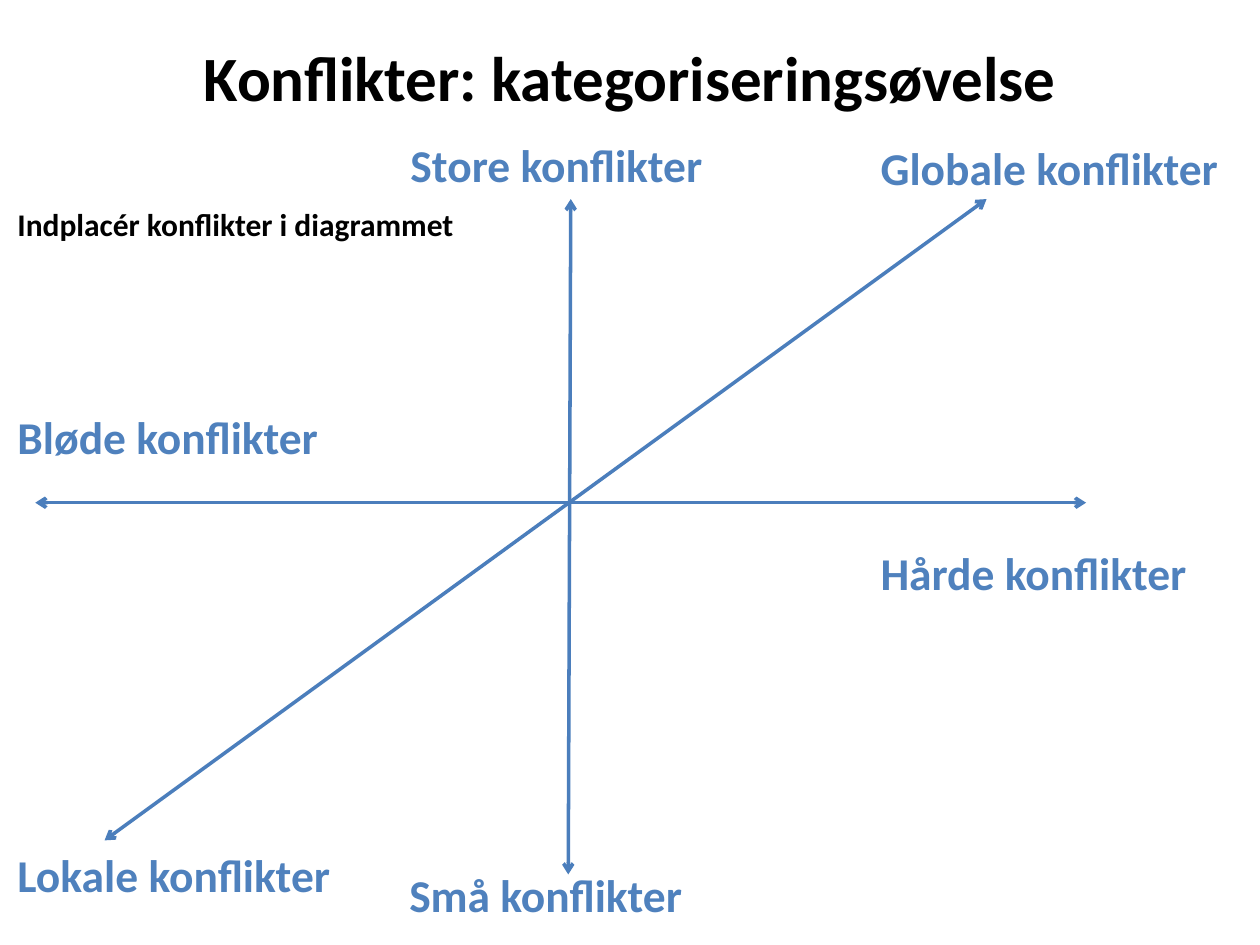
from lxml.etree import SubElement
from pptx import Presentation
from pptx.dml.color import RGBColor
from pptx.enum.shapes import MSO_CONNECTOR as Connector
from pptx.enum.text import MSO_ANCHOR as Anchor, MSO_AUTO_SIZE as AutoSize, PP_ALIGN as Align
from pptx.oxml.ns import qn
from pptx.util import Inches, Pt

BLACK = RGBColor(0x00, 0x00, 0x00)
LABEL_BLUE = RGBColor(0x4F, 0x81, 0xBD)
AXIS_BLUE = RGBColor(0x4B, 0x7E, 0xBC)

AXES = [
    (4.53, 0.54, 4.51, 5.9),
    (0.28, 2.95, 8.62, 2.95),
    (0.83, 5.63, 7.83, 0.54),
]
LABELS = [
    ("Store konflikter", 3.16, 0, 2.73),
    ("Små konflikter", 3.15, 5.79, 2.73),
    ("Globale konflikter", 6.89, 0.02, 2.99),
    ("Lokale konflikter", 0.04, 5.63, 2.73),
    ("Bløde konflikter", 0.04, 2.16, 2.73),
    ("Hårde konflikter", 6.89, 3.24, 2.73),
]


def add_text(slide, text, box, size, color, align=Align.LEFT, anchor=Anchor.TOP, auto_size=AutoSize.NONE):
    """Add one bold line of text in the given box."""
    shape = slide.shapes.add_textbox(*map(Inches, box))
    frame = shape.text_frame
    frame_format = {"word_wrap": True, "auto_size": auto_size, "vertical_anchor": anchor}
    for name, value in frame_format.items():
        setattr(frame, name, value)
    paragraph = frame.paragraphs[0]
    paragraph.alignment = align
    run = paragraph.add_run()
    run.text = text
    for name, value in {"name": "Calibri", "size": Pt(size), "bold": True}.items():
        setattr(run.font, name, value)
    run.font.color.rgb = color


def add_axis(slide, start_x, start_y, end_x, end_y):
    """Add a line with an open arrowhead at both ends."""
    points = map(Inches, (start_x, start_y, end_x, end_y))
    connector = slide.shapes.add_connector(Connector.STRAIGHT, *points)
    connector.line.color.rgb = AXIS_BLUE
    connector.line.width = Pt(2)
    line = connector.line._get_or_add_ln()
    for end in ("a:headEnd", "a:tailEnd"):
        SubElement(line, qn(end), type="arrow")
    SubElement(connector._element.spPr, qn("a:effectLst"))


def add_title(slide, box):
    """Add the centred slide title."""
    add_text(slide, "Konflikter: kategoriseringsøvelse", box, 36, BLACK, Align.CENTER, Anchor.MIDDLE)


def add_diagram(slide, left, top):
    """Add the three axes, their end labels and the instruction."""
    for start_x, start_y, end_x, end_y in AXES:
        add_axis(slide, left + start_x, top + start_y, left + end_x, top + end_y)
    for text, x, y, width in LABELS:
        box = (left + x, top + y, width, 0.54)
        add_text(slide, text, box, 26, LABEL_BLUE, auto_size=AutoSize.SHAPE_TO_FIT_TEXT)
    box = (left + 0.04, top + 0.54, 4.29, 0.4)
    add_text(slide, "Indplacér konflikter i diagrammet", box, 18, BLACK, auto_size=AutoSize.SHAPE_TO_FIT_TEXT)


def main():
    """Build and save the presentation."""
    presentation = Presentation()
    presentation.slide_width = Inches(10)
    presentation.slide_height = Inches(7.5)
    slide = presentation.slides.add_slide(presentation.slide_layouts[6])
    add_title(slide, (0.5, 0.3, 9, 0.61))
    add_diagram(slide, 0, 1.04)
    presentation.save("out.pptx")


if __name__ == "__main__":
    main()
